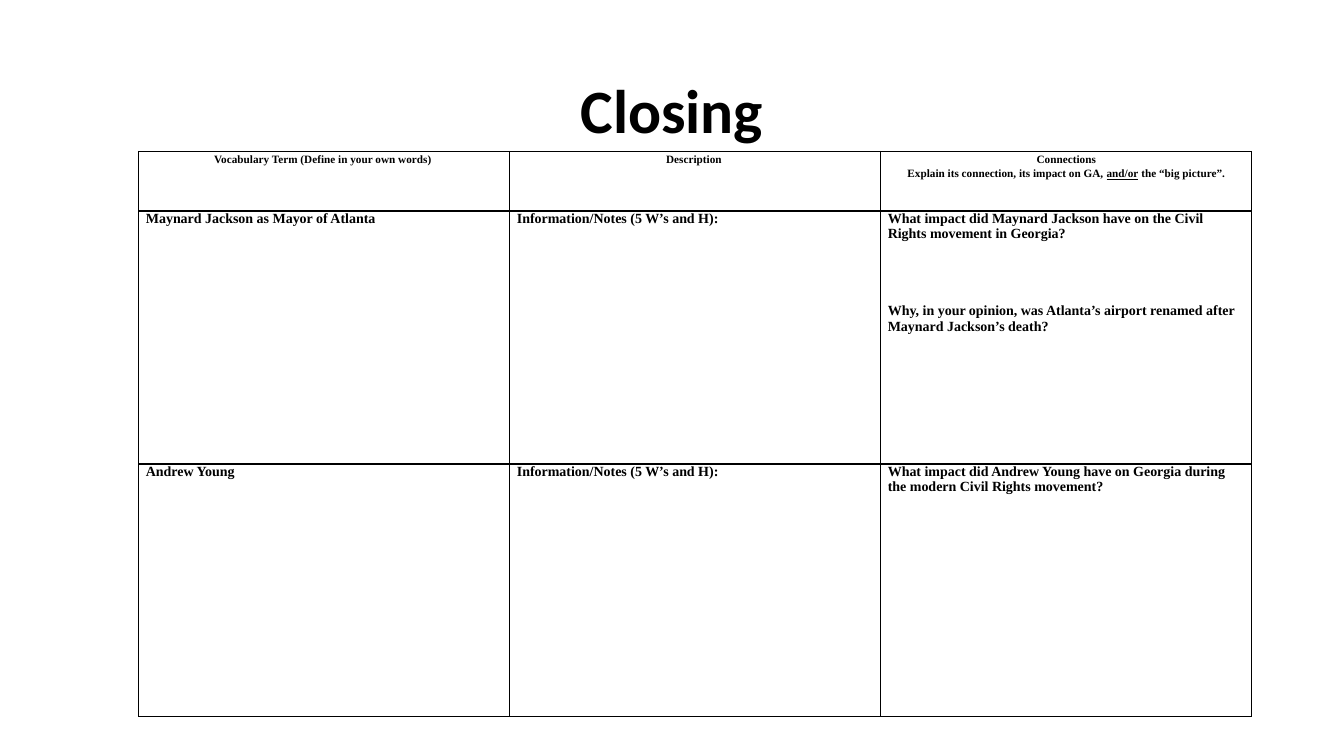
from lxml import etree
from pptx import Presentation
from pptx import util as u
from pptx.dml.color import RGBColor
from pptx.enum import text
from pptx.oxml import ns

HUES = {"ink": "000000", "page": "FFFFFF"}
MID, LEFT = text.PP_ALIGN.CENTER, text.PP_ALIGN.LEFT
HEAD = {"size": 8, "align": MID, "lead": 1.15}
BODY = {"size": 10, "align": LEFT, "lead": 1.0}
NOTES = "Information/Notes (5 W’s and H):"
ROWS = [
    (HEAD, 42.5, [
        [["Vocabulary Term (Define in your own words) "]],
        [["Description "]],
        [["Connections"],
         ["Explain its connection, its impact on GA, ", "and/or", " the “big picture”."]],
    ]),
    (BODY, 180.7, [
        [["Maynard Jackson as Mayor of Atlanta"]],
        [[NOTES]],
        [["What impact did Maynard Jackson have on the Civil Rights movement in Georgia?"],
         ["Why, in your opinion, was Atlanta’s airport renamed after Maynard Jackson’s death?"]],
    ]),
    (BODY, 180.7, [
        [["Andrew Young"]],
        [[NOTES]],
        [["What impact did Andrew Young have on Georgia during the modern Civil Rights movement?"]],
    ]),
]


def apply(obj, vals):
    for key, val in vals.items():
        setattr(obj, key, val)


class Sheet:
    def __init__(self, deck):
        self.slide = deck.slides.add_slide(deck.slide_layouts[6])
        fill = self.slide.background.fill
        fill.solid()
        fill.fore_color.rgb = RGBColor.from_string(HUES["page"])

    def letter(self, frame, paras, font, style, gap=0):
        frame.word_wrap = True
        for i, runs in enumerate(paras):
            para = frame.add_paragraph() if i else frame.paragraphs[0]
            apply(para, {"alignment": style["align"], "line_spacing": style["lead"],
                         "space_before": u.Pt(gap if i else 0)})
            for words in runs:
                run = para.add_run()
                run.text = words
                apply(run.font, {"name": font, "size": u.Pt(style["size"]), "bold": True})
                run.font.color.rgb = RGBColor.from_string(HUES["ink"])
                if words == "and/or":
                    run.font.underline = True

    def title(self, words, box):
        shape = self.slide.shapes.add_textbox(*map(u.Pt, box))
        shape.text_frame.vertical_anchor = text.MSO_ANCHOR.MIDDLE
        style = {"size": 44, "align": MID, "lead": 0.9}
        self.letter(shape.text_frame, [[words]], "Calibri", style)

    def border(self, cell):
        props = cell._tc.get_or_add_tcPr()
        for i, side in enumerate("LRTB"):
            line = etree.Element(ns.qn("a:ln" + side), w=str(u.Pt(1)))
            fill = etree.SubElement(line, ns.qn("a:solidFill"))
            etree.SubElement(fill, ns.qn("a:srgbClr"), val=HUES["ink"])
            props.insert(i, line)

    def table(self, rows, left, top, width):
        high = sum(row[1] for row in rows)
        grid = self.slide.shapes.add_table(
            len(rows), 3, *map(u.Pt, (left, top, width, high))).table
        apply(grid, {"first_row": False, "horz_banding": False})
        for r, (style, tall, cells) in enumerate(rows):
            grid.rows[r].height = u.Pt(tall)
            for c, paras in enumerate(cells):
                cell = grid.cell(r, c)
                apply(cell, {"margin_left": u.Pt(5), "margin_right": u.Pt(5),
                             "margin_top": 0, "margin_bottom": 0})
                cell.fill.background()
                self.border(cell)
                gap = 44 if style is BODY else 0
                self.letter(cell.text_frame, paras, "Times New Roman", style, gap)


def main():
    deck = Presentation()
    apply(deck, {"slide_width": u.Pt(960), "slide_height": u.Pt(540)})
    sheet = Sheet(deck)
    sheet.title("Closing", (66, 28.8, 828, 104.4))
    sheet.table(ROWS, 99.2, 108.2, 795)
    deck.save("out.pptx")


if __name__ == "__main__":
    main()
